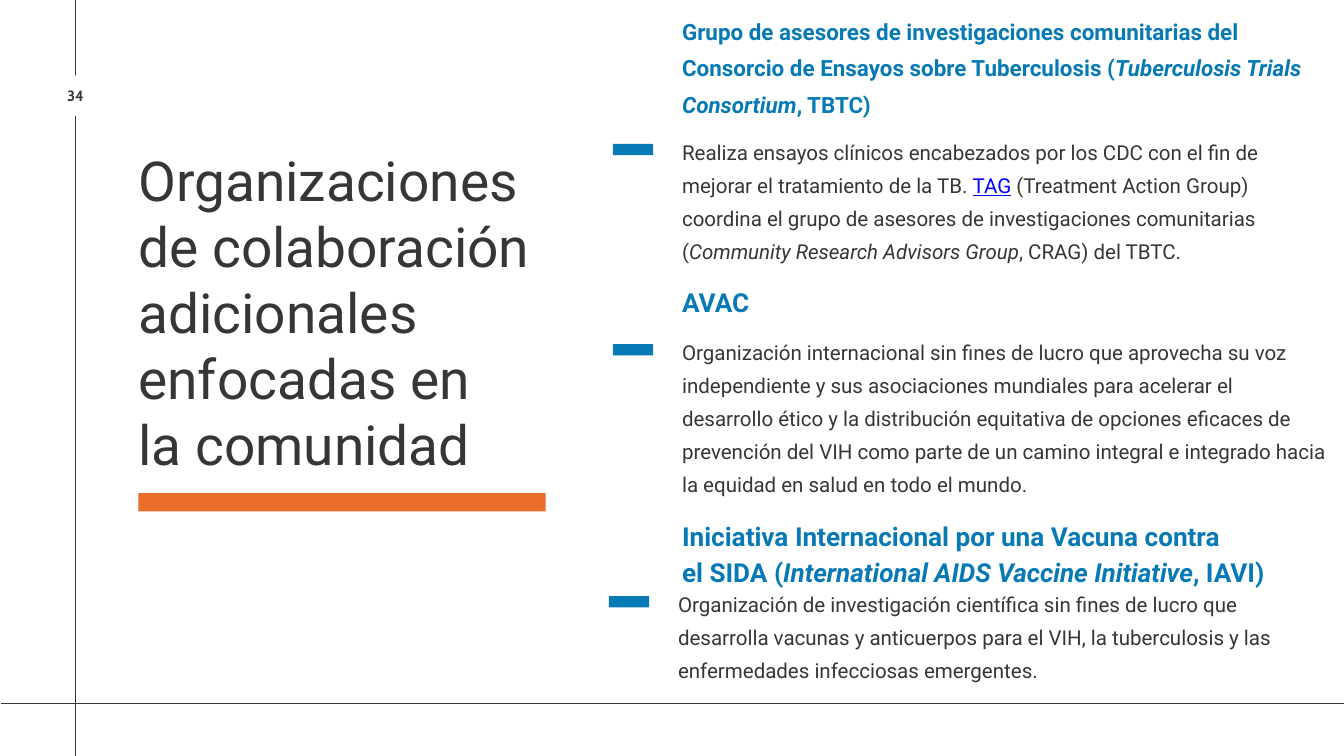
from lxml import etree
from pptx import Presentation
from pptx.dml.color import RGBColor
from pptx.enum.shapes import MSO_CONNECTOR, MSO_SHAPE
from pptx.enum.text import MSO_ANCHOR, MSO_AUTO_SIZE, PP_ALIGN
from pptx.oxml.ns import qn
from pptx.util import Inches, Pt

RECT = MSO_SHAPE.RECTANGLE
STRAIGHT = MSO_CONNECTOR.STRAIGHT
TOP = MSO_ANCHOR.TOP
NO_FIT = MSO_AUTO_SIZE.NONE
LEFT, CENTER = PP_ALIGN.LEFT, PP_ALIGN.CENTER

DARK, BLUE, ORANGE, WHITE, LINK = "373636", "077AB5", "EA6D29", "FFFFFF", "0000FF"
WIDTH, HEIGHT = 20, 11.25

ORGANIZATIONS = [
    {
        "heading": [
            ("Grupo de asesores de investigaciones comunitarias del Consorcio de Ensayos sobre Tuberculosis (", ""),
            ("Tuberculosis Trials Consortium", "italic"),
            (", TBTC)", ""),
        ],
        "heading_size": 24,
        "heading_box": (10.15, 0.12, 9.31, 1.58),
        "body": [
            ("Realiza ensayos clínicos encabezados por los CDC con el fin de mejorar el tratamiento de la TB. ", ""),
            ("TAG", "link"),
            (" (Treatment Action Group) coordina el grupo de asesores de investigaciones comunitarias (", ""),
            ("Community Research Advisors Group", "italic"),
            (", CRAG) del TBTC.", ""),
        ],
        "body_box": (10.15, 1.96, 9.58, 1.91),
    },
    {
        "heading": [("AVAC", "")],
        "heading_size": 28,
        "heading_box": (10.15, 4.18, 9.31, 0.51),
        "body": [
            ("Organización internacional sin fines de lucro que aprovecha su voz independiente y sus "
             "asociaciones mundiales para acelerar el desarrollo ético y la distribución equitativa de "
             "opciones eficaces de prevención del VIH como parte de un camino integral e integrado hacia "
             "la equidad en salud en todo el mundo.", ""),
        ],
        "body_box": (10.15, 4.94, 9.62, 2.89),
    },
    {
        "heading": [
            ("Iniciativa Internacional por una Vacuna contra ", ""),
            ("", "break"),
            ("el SIDA (", ""),
            ("International AIDS Vaccine Initiative", "italic"),
            (", IAVI)", ""),
        ],
        "heading_size": 28,
        "heading_box": (10.15, 7.66, 9.68, 1.05),
        "body": [
            ("Organización de investigación científica sin fines de lucro que desarrolla vacunas y "
             "anticuerpos para el VIH, la tuberculosis y las enfermedades infecciosas emergentes.", ""),
        ],
        "body_box": (10.09, 8.69, 9.31, 1.41),
    },
]


def rgb(color):
    return RGBColor.from_string(color)


def add_bar(s, box, color):
    sp = s.shapes.add_shape(RECT, *map(Inches, box))
    sp.shadow.inherit = False
    sp.fill.solid()
    sp.fill.fore_color.rgb = rgb(color)
    sp.line.fill.background()


def add_rule(s, ends):
    line = s.shapes.add_connector(STRAIGHT, *map(Inches, ends))
    line.line.color.rgb = rgb(DARK)
    line.line.width = Pt(0.75)
    etree.SubElement(line._element.spPr, qn("a:effectLst"))


def prepare_frame(tf):
    tf.word_wrap = True
    tf.auto_size = NO_FIT
    tf.vertical_anchor = TOP
    tf.margin_left = tf.margin_right = tf.margin_top = tf.margin_bottom = 0


def format_paragraph(p, size, spacing, color, bold=False, font="Roboto", align=LEFT):
    p.alignment = align
    p.line_spacing = Pt(spacing)
    for r in p.runs:
        r.font.name = font
        r.font.size = Pt(size)
        r.font.bold = bold
        r.font.color.rgb = rgb(color)


def add_text(s, box, parts, size, spacing, color, **style):
    tf = s.shapes.add_textbox(*map(Inches, box)).text_frame
    prepare_frame(tf)
    p = tf.paragraphs[0]
    for text, kind in parts:
        if kind == "break":
            p.add_line_break()
            continue
        r = p.add_run()
        r.text = text
    format_paragraph(p, size, spacing, color, **style)
    kinds = [kind for _, kind in parts if kind != "break"]
    for r, kind in zip(p.runs, kinds):
        if kind == "italic":
            r.font.italic = True
        elif kind == "link":
            r.font.underline = True
            r.font.color.rgb = rgb(LINK)


def add_frame(s, number):
    add_rule(s, (1.12, 0, 1.12, HEIGHT))
    add_rule(s, (0.02, 10.46, WIDTH, 10.46))
    add_bar(s, (0.69, 1.12, 0.86, 0.61), WHITE)
    add_text(s, (0.76, 1.31, 0.73, 0.25), [(number, "")], 16, 17.6, DARK,
             bold=True, font="Cabin", align=CENTER)


def add_title(s, box, text):
    left, top, width, height = box
    title = s.shapes.title
    title.left, title.top, title.width, title.height = map(Inches, box)
    tf = title.text_frame
    tf.text = text
    prepare_frame(tf)
    format_paragraph(tf.paragraphs[0], 59, 70.8, DARK)
    add_bar(s, (left, top + height + 0.25, 6.06, 0.27), ORANGE)


def add_organization(s, org):
    left, top = org["body_box"][:2]
    add_bar(s, (left - 1.03, top + 0.18, 0.6, 0.17), BLUE)
    add_text(s, org["body_box"], org["body"], 22, 35.2, DARK)
    add_text(s, org["heading_box"], org["heading"], org["heading_size"], 39.2, BLUE, bold=True)


def main():
    prs = Presentation()
    prs.slide_width, prs.slide_height = Inches(WIDTH), Inches(HEIGHT)
    s = prs.slides.add_slide(prs.slide_layouts[5])
    add_frame(s, "34")
    add_title(s, (2.06, 2.18, 6.32, 4.91),
              "Organizaciones de colaboración adicionales enfocadas en \vla comunidad")
    for org in ORGANIZATIONS:
        add_organization(s, org)
    prs.save("out.pptx")


if __name__ == "__main__":
    main()
